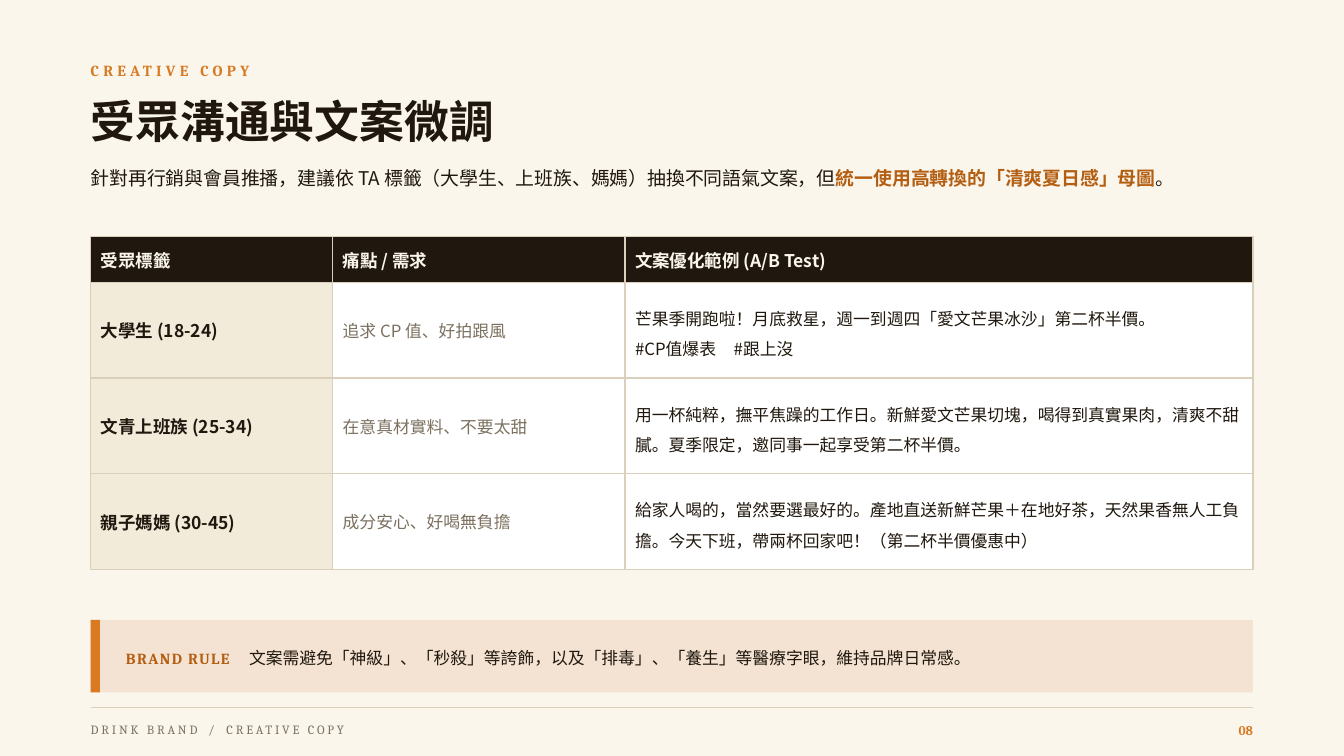
"""Build the audience copy slide with its table, brand rule and footer."""
from lxml.etree import SubElement
from pptx import Presentation
from pptx.dml.color import RGBColor
from pptx.enum.shapes import MSO_CONNECTOR, MSO_SHAPE
from pptx.enum.text import MSO_ANCHOR, MSO_AUTO_SIZE, PP_ALIGN
from pptx.oxml.ns import qn
from pptx.util import Pt

COLORS = {
    "cream": "FAF6EC", "ink": "20180E", "orange": "D97A22", "rust": "B45E12",
    "muted": "7C7160", "rule": "D9CFBB", "sand": "F2EBDA", "white": "FFFFFF",
    "peach": "F4E3D3", "pale": "FBF6EC",
}
SERIF, SANS, HEADING = "Cambria", "Noto Sans CJK SC", "Noto Sans CJK TC"


def style(size, color, name=SANS, bold=False, tracking=0):
    return {"font": {"size": Pt(size), "name": name, "bold": bold},
            "color": color, "tracking": tracking}


STYLES = {
    "eyebrow": style(11, "orange", SERIF, True, 3),
    "title": style(32, "ink", HEADING, True),
    "lead": style(13.5, "ink"),
    "lead_strong": style(13.5, "rust", bold=True),
    "header": style(12.5, "pale", bold=True),
    "audience": style(12.5, "ink", bold=True),
    "need": style(12, "muted"),
    "copy": style(12, "ink"),
    "rule_label": style(11, "rust", SERIF, True, 1),
    "footer": style(9, "muted", SERIF, tracking=2),
    "number": style(9.5, "orange", SERIF, True),
}

EYEBROW = [[("CREATIVE COPY", "eyebrow")]]
TITLE = [[("受眾溝通與文案微調", "title")]]
LEAD = [[
    ("針對再行銷與會員推播，建議依 TA 標籤（大學生、上班族、媽媽）抽換不同語氣文案，但", "lead"),
    ("統一使用高轉換的「清爽夏日感」母圖", "lead_strong"),
    ("。", "lead"),
]]
HEADERS = ("受眾標籤", "痛點 / 需求", "文案優化範例 (A/B Test)")
AUDIENCES = [
    ("大學生 (18-24)", "追求 CP 值、好拍跟風",
     "芒果季開跑啦！月底救星，週一到週四「愛文芒果冰沙」第二杯半價。\n#CP值爆表\t#跟上沒"),
    ("文青上班族 (25-34)", "在意真材實料、不要太甜",
     "用一杯純粹，撫平焦躁的工作日。新鮮愛文芒果切塊，喝得到真實果肉，清爽不甜膩。"
     "夏季限定，邀同事一起享受第二杯半價。"),
    ("親子媽媽 (30-45)", "成分安心、好喝無負擔",
     "給家人喝的，當然要選最好的。產地直送新鮮芒果＋在地好茶，天然果香無人工負擔。"
     "今天下班，帶兩杯回家吧！（第二杯半價優惠中）"),
]
BRAND_RULE = [[
    ("BRAND RULE\t", "rule_label"),
    ("文案需避免「神級」、「秒殺」等誇飾，以及「排毒」、「養生」等醫療字眼，維持品牌日常感。", "copy"),
]]
FOOTER = [[("DRINK BRAND\t/\tCREATIVE COPY", "footer")]]
NUMBER = [[("08", "number")]]

LEFT, WIDTH = 64.8, 830.2
RIGHT = LEFT + WIDTH
COLUMNS = (172.8, 208.8, 448.6)
ROWS = (32.4, 68.4, 68.4, 68.4)
COLUMN_STYLES = ("audience", "need", "copy")
COLUMN_FILLS = ("sand", "white", "white")
COLUMN_SPACING = (None, None, 1.25)
TABLE_TOP = 169.2
RULE_TOP, RULE_HEIGHT, RULE_TEXT_LEFT = 442.8, 51.84, 90
FOOTER_LINE, FOOTER_TOP, FOOTER_HEIGHT = 505.44, 509.76, 23.04


def rgb(name):
    return RGBColor.from_string(COLORS[name])


def paint(target, name):
    target.fill.solid()
    target.fill.fore_color.rgb = rgb(name)


def write(frame, paragraphs, spacing=None, align=PP_ALIGN.LEFT, tabs=()):
    for index, spans in enumerate(paragraphs):
        para = frame.paragraphs[0] if index == 0 else frame.add_paragraph()
        if tabs:
            stops = SubElement(para._p.get_or_add_pPr(), qn("a:tabLst"))
            for stop in tabs:
                SubElement(stops, qn("a:tab"), pos=str(Pt(stop)), algn="l")
        para.alignment = align
        if spacing:
            para.line_spacing = spacing
        for text, style_name in spans:
            span = para.add_run()
            span.text = text
            look = STYLES[style_name]
            for key, value in look["font"].items():
                setattr(span.font, key, value)
            span.font.color.rgb = rgb(look["color"])
            properties = span.font._element
            SubElement(properties, qn("a:ea"), typeface=look["font"]["name"])
            if look["tracking"]:
                properties.set("spc", str(look["tracking"] * 100))


def fill_box(box, area, paragraphs, anchor=MSO_ANCHOR.MIDDLE, **layout):
    for side, value in zip(("left", "top", "width", "height"), area):
        setattr(box, side, Pt(value))
    settings = {"word_wrap": True, "auto_size": MSO_AUTO_SIZE.NONE,
                "vertical_anchor": anchor, "margin_left": 0, "margin_right": 0,
                "margin_top": 0, "margin_bottom": 0}
    for key, value in settings.items():
        setattr(box.text_frame, key, value)
    write(box.text_frame, paragraphs, **layout)


def add_text(page, area, paragraphs, **layout):
    box = page.shapes.add_textbox(*map(Pt, area))
    fill_box(box, area, paragraphs, **layout)


def add_bar(page, area, color):
    bar = page.shapes.add_shape(MSO_SHAPE.RECTANGLE, *map(Pt, area))
    bar.shadow.inherit = False
    bar.line.fill.background()
    paint(bar, color)


def format_cell(cell, fill):
    settings = {"vertical_anchor": MSO_ANCHOR.MIDDLE,
                "margin_left": Pt(7.2), "margin_right": Pt(7.2),
                "margin_top": Pt(4.32), "margin_bottom": Pt(4.32)}
    for key, value in settings.items():
        setattr(cell, key, value)
    properties = cell._tc.get_or_add_tcPr()
    for side in ("lnL", "lnR", "lnT", "lnB"):
        border = SubElement(properties, qn(f"a:{side}"), w=str(Pt(1)))
        solid = SubElement(border, qn("a:solidFill"))
        SubElement(solid, qn("a:srgbClr"), val=COLORS["rule"])
    paint(cell, fill)


def add_audience_table(page):
    area = (LEFT, TABLE_TOP, WIDTH, sum(ROWS))
    table = page.shapes.add_table(len(ROWS), len(COLUMNS), *map(Pt, area)).table
    table.horz_banding = False
    for column, width in zip(table.columns, COLUMNS):
        column.width = Pt(width)
    for row, height in zip(table.rows, ROWS):
        row.height = Pt(height)
    for index, text in enumerate(HEADERS):
        cell = table.cell(0, index)
        format_cell(cell, "ink")
        write(cell.text_frame, [[(text, "header")]])
    for row_index, texts in enumerate(AUDIENCES, start=1):
        for index, text in enumerate(texts):
            cell = table.cell(row_index, index)
            format_cell(cell, COLUMN_FILLS[index])
            lines = [[(line, COLUMN_STYLES[index])] for line in text.split("\n")]
            write(cell.text_frame, lines, spacing=COLUMN_SPACING[index],
                  tabs=(70.5,) if "\t" in text else ())


def add_footer(page):
    line = page.shapes.add_connector(
        MSO_CONNECTOR.STRAIGHT, *map(Pt, (LEFT, FOOTER_LINE, RIGHT, FOOTER_LINE)))
    line.line.color.rgb = rgb("rule")
    line.line.width = Pt(1)
    SubElement(line._element.spPr, qn("a:effectLst"))
    add_text(page, (LEFT, FOOTER_TOP, 576, FOOTER_HEIGHT), FOOTER, tabs=(84, 97))
    add_text(page, (RIGHT - 86.4, FOOTER_TOP, 86.4, FOOTER_HEIGHT), NUMBER,
             align=PP_ALIGN.RIGHT)


def main():
    deck = Presentation()
    deck.slide_width, deck.slide_height = Pt(960), Pt(540)
    page = deck.slides.add_slide(deck.slide_layouts[5])
    paint(page.background, "cream")
    add_text(page, (LEFT, 39.6, 288, 21.6), EYEBROW)
    fill_box(page.shapes.title, (LEFT, 61.2, 720, 50.4), TITLE)
    add_text(page, (LEFT, 115.2, WIDTH, 39.6), LEAD, anchor=MSO_ANCHOR.TOP, spacing=1.25)
    add_audience_table(page)
    for width, color in ((WIDTH, "peach"), (6.48, "orange")):
        add_bar(page, (LEFT, RULE_TOP, width, RULE_HEIGHT), color)
    add_text(page, (RULE_TEXT_LEFT, RULE_TOP, 787, RULE_HEIGHT), BRAND_RULE,
             spacing=1.15, tabs=(87.9,))
    add_footer(page)
    deck.save("out.pptx")


if __name__ == "__main__":
    main()
